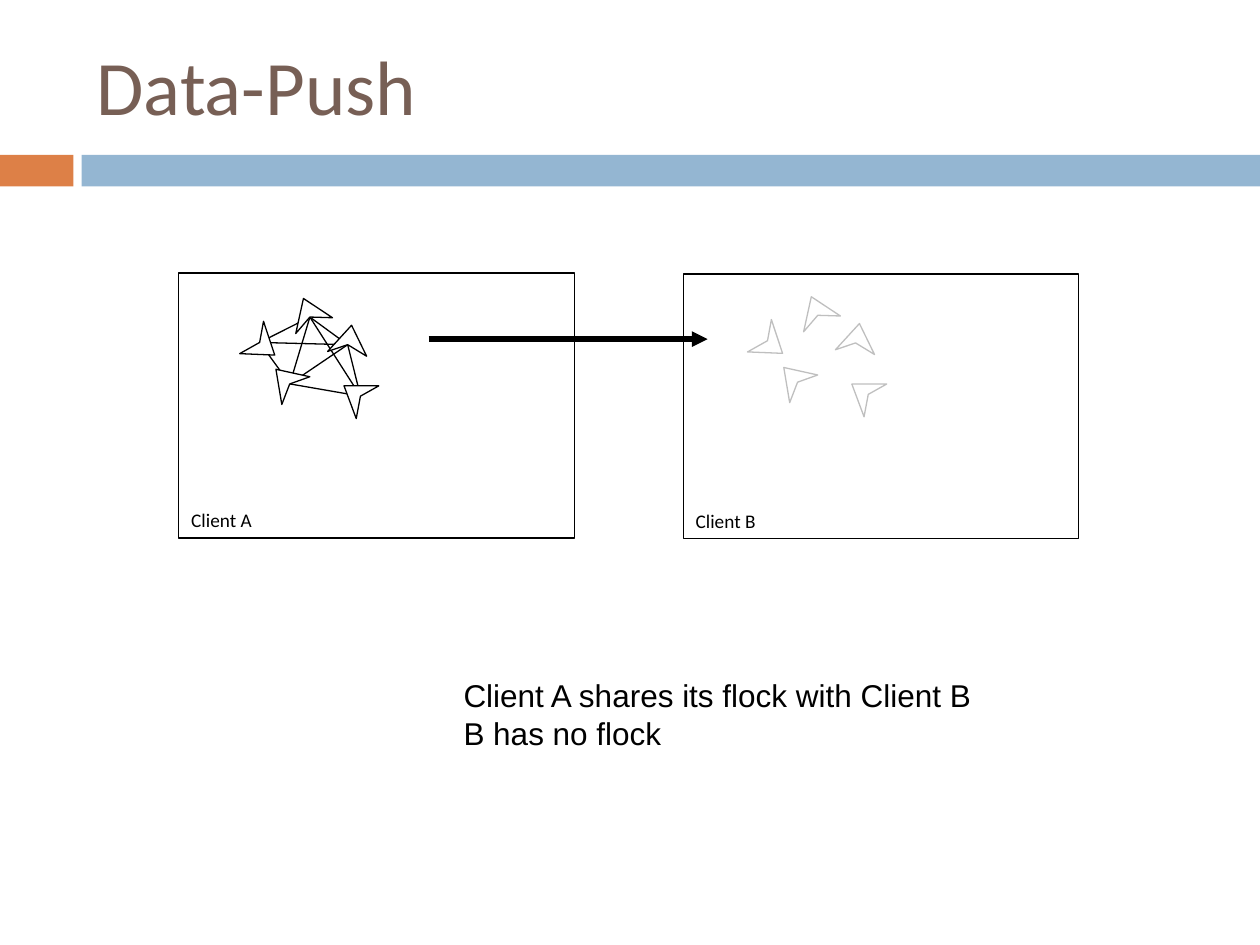
from itertools import combinations
from lxml import etree
from pptx import Presentation
from pptx import util as u
from pptx.dml.color import RGBColor
from pptx.enum import shapes, text
from pptx.oxml.ns import qn

Pt = u.Pt
COLORS = {"title": "775F55", "orange": "DD8047", "blue": "94B6D2",
          "black": "000000", "white": "FFFFFF", "gray": "BFBFBF"}
RGB = {name: RGBColor.from_string(c) for name, c in COLORS.items()}


def style(sp, fill, line=None):
    sp.shadow.inherit = False
    sp.fill.solid()
    sp.fill.fore_color.rgb = RGB[fill]
    if line:
        sp.line.color.rgb = RGB[line]
        sp.line.width = Pt(0.75)
    else:
        sp.line.fill.background()


def connect(s, start, end, width):
    cx = s.shapes.add_connector(shapes.MSO_CONNECTOR.STRAIGHT,
                                *[Pt(v) for v in (*start, *end)])
    cx.line.color.rgb = RGB["black"]
    cx.line.width = Pt(width)
    etree.SubElement(cx._element.spPr, qn("a:effectLst"))
    return cx


prs = Presentation()
prs.slide_width, prs.slide_height = Pt(720), Pt(540)
s = prs.slides.add_slide(prs.slide_layouts[5])

for left, width, color in [(0, 42, "orange"), (46.6, 673.4, "blue")]:
    bar = s.shapes.add_shape(shapes.MSO_SHAPE.RECTANGLE,
                             Pt(left), Pt(88.5), Pt(width), Pt(18))
    style(bar, color)

title = s.shapes.title
title.left, title.top, title.width, title.height = Pt(48), Pt(9.4), Pt(642), Pt(78)
tf = title.text_frame
tf.text = "Data-Push"
tf.vertical_anchor = text.MSO_ANCHOR.MIDDLE
p = tf.paragraphs[0]
p.alignment = text.PP_ALIGN.LEFT
p.font.name, p.font.size = "Calibri", Pt(44)
p.font.color.rgb = RGB["title"]

for label, left, top in [("Client B", 390.4, 156.5), ("Client A", 102.2, 156)]:
    box = s.shapes.add_shape(shapes.MSO_SHAPE.RECTANGLE,
                             Pt(left), Pt(top), Pt(226), Pt(151.4))
    style(box, "white", "black")
    tf = box.text_frame
    tf.text = label
    tf.vertical_anchor = text.MSO_ANCHOR.BOTTOM
    p = tf.paragraphs[0]
    p.alignment = text.PP_ALIGN.LEFT
    p.font.name, p.font.size = "Calibri", Pt(11)
    p.font.color.rgb = RGB["black"]

flock = {
    "lower left": [(157.7, 211), (177.1, 215.3), (165.6, 219.4), (161.1, 231.1)],
    "lower right": [(196.6, 220.5), (216.5, 220.5), (206, 226.4), (203.6, 239.2)],
    "top": [(173.4, 170.6), (190, 181.6), (177.1, 181.2), (169, 190.6)],
    "right": [(200.9, 185.9), (209.5, 203.6), (198.7, 197), (187.2, 200.9)],
    "left": [(157, 202.9), (137, 202.1), (148.4, 195.7), (150.6, 183.6)],
}

for a, b in combinations(flock, 2):
    if {a, b} != {"left", "lower right"}:
        connect(s, flock[a][2], flock[b][2], 0.75)

for dx, dy, color in [(0, 0, "black"), (290.2, -1, "gray")]:
    for boid in flock.values():
        pts = [(Pt(x + dx), Pt(y + dy)) for x, y in boid]
        fb = s.shapes.build_freeform(*pts[0], scale=1.0)
        fb.add_line_segments(pts[1:], close=True)
        style(fb.convert_to_shape(), "white", color)

arrow = connect(s, (245, 193.8), (404.4, 193.8), 3)
etree.SubElement(arrow.line._get_or_add_ln(), qn("a:tailEnd"), type="triangle")

note = s.shapes.add_textbox(Pt(257.8), Pt(383), Pt(307.4), Pt(51))
tf = note.text_frame
tf.word_wrap = False
tf.auto_size = text.MSO_AUTO_SIZE.SHAPE_TO_FIT_TEXT
tf.text = "Client A shares its flock with Client B\nB has no flock"
for p in tf.paragraphs:
    p.font.name, p.font.size = "Arial", Pt(18)
    p.font.color.rgb = RGB["black"]

prs.save("out.pptx")
